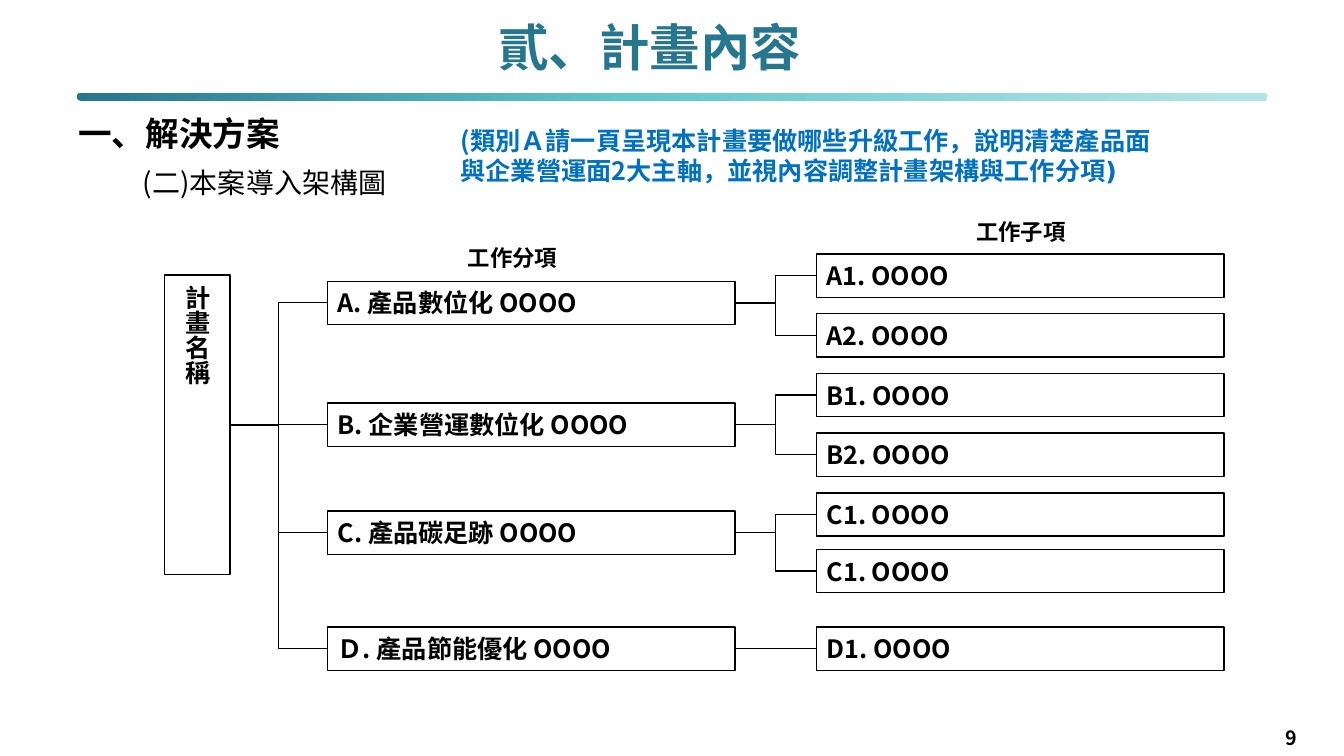
import pptx
import pptx.util
import pptx.dml.color
import pptx.enum.shapes
import pptx.enum.text
import pptx.oxml.ns
from lxml import etree

Pt = pptx.util.Pt
RGB = pptx.dml.color.RGBColor
SHAPE = pptx.enum.shapes.MSO_SHAPE
ELBOW = pptx.enum.shapes.MSO_CONNECTOR.ELBOW
LEFT = pptx.enum.text.PP_ALIGN.LEFT
CENTER = pptx.enum.text.PP_ALIGN.CENTER
qn = pptx.oxml.ns.qn

BLACK = RGB(0x00, 0x00, 0x00)
WHITE = RGB(0xFF, 0xFF, 0xFF)
TEAL = RGB(0x26, 0x76, 0x8E)
AQUA = RGB(0x61, 0xC7, 0xCB)
PALE = RGB(0xB1, 0xE3, 0xE5)
BLUE = RGB(0x00, 0x70, 0xC0)
CJK = "Noto Sans CJK SC"
SANS = "DejaVu Sans"

prs = pptx.Presentation()
prs.slide_width = pptx.util.Inches(13.333)
prs.slide_height = pptx.util.Inches(7.5)
s = prs.slides.add_slide(prs.slide_layouts[6])


def share(x, y, w, h):
    """Turn percentages of the slide's width and height into lengths."""
    across, down = prs.slide_width / 100, prs.slide_height / 100
    return [round(n) for n in (x * across, y * down, w * across, h * down)]


def write(sp, runs, size, color=BLACK, bold=True, align=LEFT, spacing=None, indent=0):
    """Fill a shape with one middle-anchored paragraph of (text, font) runs."""
    tf = sp.text_frame
    tf.word_wrap = True
    tf.vertical_anchor = pptx.enum.text.MSO_ANCHOR.MIDDLE
    p = tf.paragraphs[0]
    p.alignment = align
    if spacing:
        p.line_spacing = spacing
    if indent:
        p._p.get_or_add_pPr().set("marL", str(pptx.util.Inches(indent)))
    for text, face in runs:
        r = p.add_run()
        r.text = text
        r.font.color.rgb = color
        for key, value in dict(name=face, size=Pt(size), bold=bold).items():
            setattr(r.font, key, value)
        etree.SubElement(r._r.get_or_add_rPr(), qn("a:ea")).set("typeface", face)


# Title rule
bar = s.shapes.add_shape(SHAPE.ROUNDED_RECTANGLE, *share(5.7, 12.27, 88.6, 1.07))
bar.adjustments[0] = 0.5
bar.shadow.inherit = False
bar.line.fill.background()
bar.fill.gradient()
bar.fill.gradient_angle = 0
stops = bar._element.spPr.find(".//" + qn("a:gsLst"))
for old in list(stops):
    stops.remove(old)
for position, color in ((0, TEAL), (46, AQUA), (97, PALE)):
    gs = etree.SubElement(stops, qn("a:gs"), pos=str(position * 1000))
    etree.SubElement(gs, qn("a:srgbClr"), val=str(color))

# Free text
NOTE = [("(類別Ａ請一頁呈現本計畫要做哪些升級工作，說明清楚產品面與企業營運面2大主軸，並", CJK),
        ("視內容調整計畫架構與工作分項)", SANS)]
texts = [
    ((94.9, 95.07, 5.1, 4.93), [("9", CJK)], dict(size=14)),
    ((36.23, 2.33, 24.23, 8.67), [("貳、計畫內容", CJK)],
     dict(size=36, color=TEAL, align=CENTER, spacing=0.9)),
    ((5.1, 15.07, 62.34, 5.87), [("一、解決方案", CJK)], dict(size=24, spacing=Pt(24))),
    ((6.9, 21.2, 65.7, 5.87), [("(二)本案導入架構圖", CJK)],
     dict(size=20, bold=False, indent=0.4)),
    ((33.53, 15.87, 53.94, 9.47), NOTE, dict(size=18, color=BLUE, spacing=Pt(21.5))),
    ((31.06, 31.6, 17.33, 4.93), [("工作分項", CJK)], dict(size=16, indent=0.4)),
    ((61.44, 28.13, 29.03, 4.93), [("工作子項", CJK)], dict(size=16, align=CENTER)),
]
for place, runs, look in texts:
    write(s.shapes.add_textbox(*share(*place)), runs, **look)

# Tree: (text, place, index of the parent box)
BRANCH_X, LEAF_X, BOX = 24.38, 60.77, (30.3, 5.73)
LEAF_TOP, LEAF_STEP = 33.6, 7.9
branches = [
    ("A. 產品數位化 OOOO", 37.2),
    ("B. 企業營運數位化 OOOO", 53.33),
    ("C. 產品碳足跡 OOOO", 67.6),
    ("Ｄ. 產品節能優化 OOOO", 82.93),
]
leaf_tops = [LEAF_TOP + LEAF_STEP * i for i in range(5)] + [72.67, 82.93]
leaves = zip(("A1", "A2", "B1", "B2", "C1", "C1", "D1"), leaf_tops, (1, 1, 2, 2, 3, 3, 4))

nodes = [("計畫名稱", (12.23, 36.4, 4.88, 39.6), None)]
nodes += [(text, (BRANCH_X, top, *BOX), 0) for text, top in branches]
nodes += [(f"{code}. OOOO", (LEAF_X, top, *BOX), parent) for code, top, parent in leaves]

boxes = []
for text, place, parent in nodes:
    sp = s.shapes.add_shape(SHAPE.RECTANGLE, *share(*place))
    sp.shadow.inherit = False
    sp.fill.solid()
    sp.fill.fore_color.rgb = WHITE
    sp.line.color.rgb = BLACK
    sp.line.width = Pt(1)
    write(sp, [(text, CJK)], size=18)
    boxes.append(sp)
    if parent is None:
        sp.text_frame._txBody.bodyPr.set("vert", "eaVert")
        continue
    link = s.shapes.add_connector(ELBOW, 0, 0, 0, 0)
    link.begin_connect(boxes[parent], 3)
    link.end_connect(sp, 1)
    link.line.color.rgb = BLACK
    link.line.width = Pt(1)
    etree.SubElement(link._element.spPr, qn("a:effectLst"))

prs.save("out.pptx")
